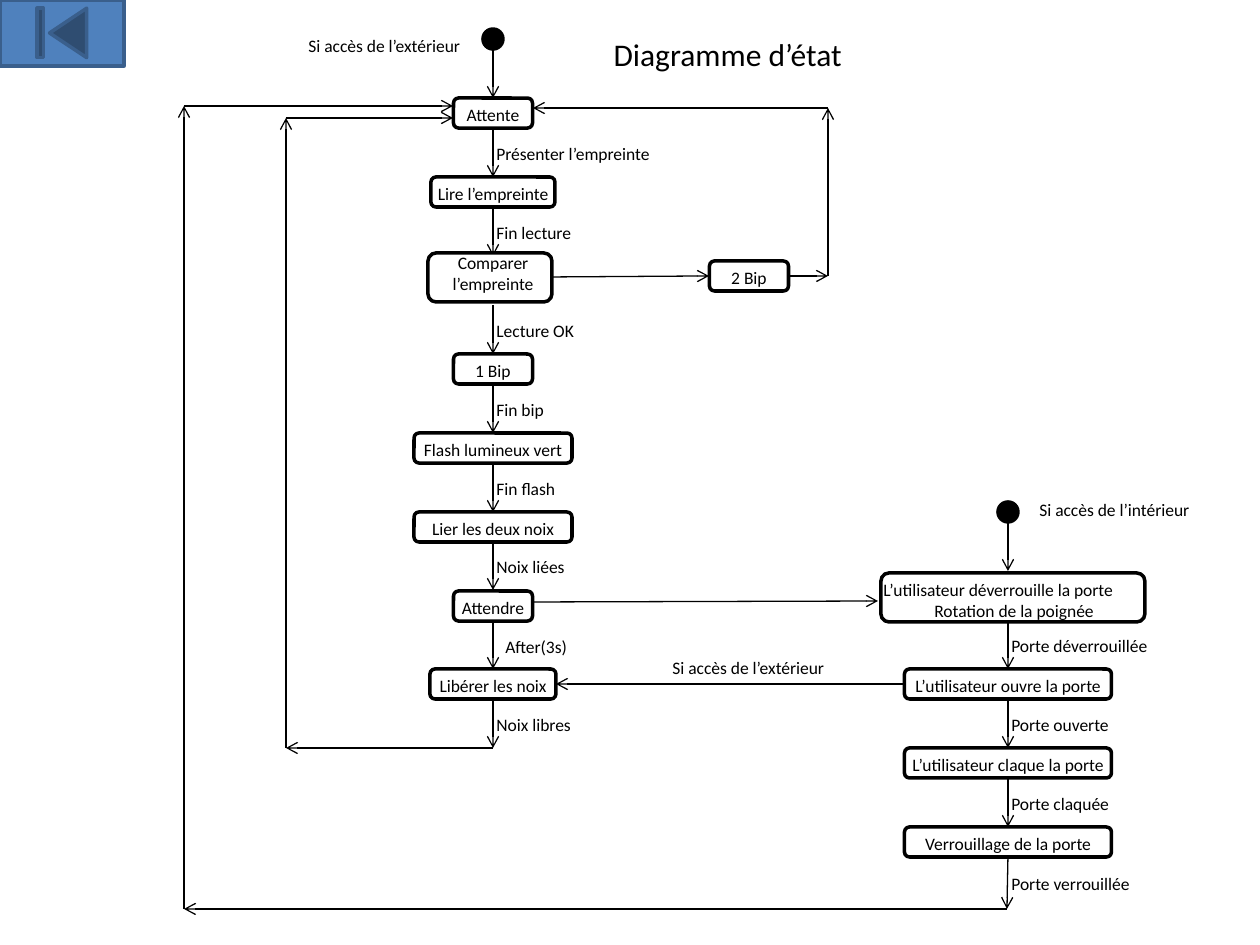
from pptx import Presentation
from pptx.dml.color import RGBColor
from pptx.enum.shapes import MSO_CONNECTOR, MSO_SHAPE
from pptx.enum.text import MSO_ANCHOR, MSO_AUTO_SIZE, PP_ALIGN
from pptx.oxml.ns import qn
from pptx.util import Pt
from lxml import etree

LEFT, CENTER = PP_ALIGN.LEFT, PP_ALIGN.CENTER
ROUNDED, OVAL = MSO_SHAPE.ROUNDED_RECTANGLE, MSO_SHAPE.OVAL
BACK_BUTTON = MSO_SHAPE.ACTION_BUTTON_BEGINNING
STRAIGHT = MSO_CONNECTOR.STRAIGHT

THEME = {
    "font": "Calibri", "title": 18, "body": 10,
    "ink": RGBColor(0, 0, 0), "paper": RGBColor(255, 255, 255),
    "button": RGBColor(0x4F, 0x81, 0xBD), "button_edge": RGBColor(0x3A, 0x5F, 0x8C),
    "outline": 2, "arrow": 0.75,
}
EMU_PER_PX = 914400 // 126
OUTSIDE, INSIDE = 493, 1008  # centre lines of the two state columns
LABEL_H, STATE_H, TALL_H = 34, 30, 49
STEP, LABEL_DROP, LABEL_SHIFT = 49, 9, 9

TITLE = ("Diagramme d’état", (601, 29, 256, 50))

# text, centre x, top, box width, text width
STATES = [
    ("Attente", OUTSIDE, 98, 79, 98),
    ("Lire l’empreinte", OUTSIDE, 177, 124, 156),
    ("1 Bip", OUTSIDE, 354, 79, 98),
    ("Flash lumineux vert", OUTSIDE, 433, 158, 197),
    ("Lier les deux noix", OUTSIDE, 512, 158, 197),
    ("Attendre", OUTSIDE, 591, 79, 98),
    ("Libérer les noix", OUTSIDE, 669, 126, 158),
    ("2 Bip", 749, 261, 79, 98),
    ("L’utilisateur ouvre la porte", INSIDE, 669, 207, 246),
    ("L’utilisateur claque la porte", INSIDE, 748, 207, 246),
    ("Verrouillage de la porte", INSIDE, 827, 207, 246),
]
# text, box, text area, alignment of each paragraph
TALL_STATES = [
    ("Comparer l’empreinte", (428, 253, 124, TALL_H), (415, 246, 156, 92), [CENTER]),
    ("L’utilisateur déverrouille la porte\nRotation de la poignée",
     (881, 573, 264, TALL_H), (871, 573, 286, 77), [LEFT, CENTER]),
]
# text, column, start y, label width
TRANSITIONS = [
    ("Présenter l’empreinte", OUTSIDE, 128, 183),
    ("Fin lecture", OUTSIDE, 207, 101),
    ("Lecture OK", OUTSIDE, 305, 105),
    ("Fin bip", OUTSIDE, 384, 73),
    ("Fin flash", OUTSIDE, 463, 84),
    ("Noix liées", OUTSIDE, 541, 95),
    ("Noix libres", OUTSIDE, 699, 101),
    ("Porte déverrouillée", INSIDE, 620, 164),
    ("Porte ouverte", INSIDE, 699, 125),
    ("Porte claquée", INSIDE, 778, 125),
]
# text, left, top, width
FREE_LABELS = [
    ("Si accès de l’extérieur", 296, 29, 181),
    ("Si accès de l’intérieur", 1027, 493, 178),
    ("Si accès de l’extérieur", 660, 651, 181),
    ("After(3s)", OUTSIDE, 630, 88),
    ("Porte verrouillée", INSIDE - LABEL_SHIFT, 867, 146),
]
# every leg of a route ends in an arrowhead
ROUTES = [
    [(OUTSIDE, 49), (OUTSIDE, 98)],
    [(INSIDE, 522), (INSIDE, 571)],
    [(OUTSIDE, 620), (OUTSIDE, 669)],
    [(552, 277), (709, 276)],
    [(789, 276), (828, 276), (828, 108), (533, 108)],
    [(533, 602), (878, 601)],
    [(910, 684), (556, 684)],
    [(OUTSIDE, 748), (286, 748), (286, 118), (453, 118)],
    [(INSIDE, 857), (1007, 909), (184, 909), (184, 106), (453, 106)],
]
STARTS = [(OUTSIDE, 39), (INSIDE, 512)]
START_SIZE = 20
BACK_AREA = (0, 0, 124, 66)


def px(values):
    return [round(value * EMU_PER_PX) for value in values]


def write(frame, text, size, alignments):
    frame.text = text
    frame.vertical_anchor = MSO_ANCHOR.TOP
    for paragraph, alignment in zip(frame.paragraphs, alignments):
        paragraph.alignment = alignment
        for run in paragraph.runs:
            run.font.size = Pt(size)
            run.font.name = THEME["font"]
            run.font.color.rgb = THEME["ink"]


def add_text(parent, text, area, alignments=(LEFT,), wrap=False):
    frame = parent.add_textbox(*px(area)).text_frame
    frame.word_wrap = wrap
    frame.auto_size = MSO_AUTO_SIZE.SHAPE_TO_FIT_TEXT
    write(frame, text, THEME["body"], alignments)


def add_box(parent, preset, area, fill, edge):
    box = parent.add_shape(preset, *px(area))
    box.shadow.inherit = False
    box.fill.solid()
    box.fill.fore_color.rgb = fill
    box.line.color.rgb = edge
    box.line.width = Pt(THEME["outline"])


def add_state(shapes, text, box_area, text_area, alignments):
    state = shapes.add_group_shape().shapes
    add_box(state, ROUNDED, box_area, THEME["paper"], THEME["ink"])
    add_text(state, text, text_area, alignments, wrap=True)


def add_arrow(shapes, start, end):
    arrow = shapes.add_connector(STRAIGHT, *px(start + end))
    arrow.line.color.rgb = THEME["ink"]
    arrow.line.width = Pt(THEME["arrow"])
    etree.SubElement(arrow.line._get_or_add_ln(), qn("a:tailEnd"), type="arrow")
    etree.SubElement(arrow._element.spPr, qn("a:effectLst"))


def main():
    deck = Presentation()
    deck.slide_width, deck.slide_height = px((1260, 945))
    slide = deck.slides.add_slide(deck.slide_layouts[5])
    shapes = slide.shapes

    # Title
    title_text, title_area = TITLE
    title = shapes.title
    title.left, title.top, title.width, title.height = px(title_area)
    title.text_frame.word_wrap = False
    title.text_frame.auto_size = MSO_AUTO_SIZE.NONE
    write(title.text_frame, title_text, THEME["title"], [LEFT])

    # Arrows and transition labels
    for route in ROUTES:
        for start, end in zip(route, route[1:]):
            add_arrow(shapes, start, end)
    for text, x, y, width in TRANSITIONS:
        add_arrow(shapes, (x, y), (x, y + STEP))
        add_text(shapes, text, (x - LABEL_SHIFT, y + LABEL_DROP, width, LABEL_H))
    for text, left, top, width in FREE_LABELS:
        add_text(shapes, text, (left, top, width, LABEL_H))

    # States
    for text, x, top, box_w, text_w in STATES:
        add_state(shapes, text, (x - box_w / 2, top, box_w, STATE_H),
                  (x - text_w / 2, top, text_w, LABEL_H), [CENTER])
    for tall_state in TALL_STATES:
        add_state(shapes, *tall_state)

    # Start points and back button
    for x, y in STARTS:
        add_box(shapes, OVAL, (x - START_SIZE / 2, y - START_SIZE / 2, START_SIZE, START_SIZE),
                THEME["ink"], THEME["ink"])
    add_box(shapes, BACK_BUTTON, BACK_AREA, THEME["button"], THEME["button_edge"])

    deck.save("out.pptx")


if __name__ == "__main__":
    main()
